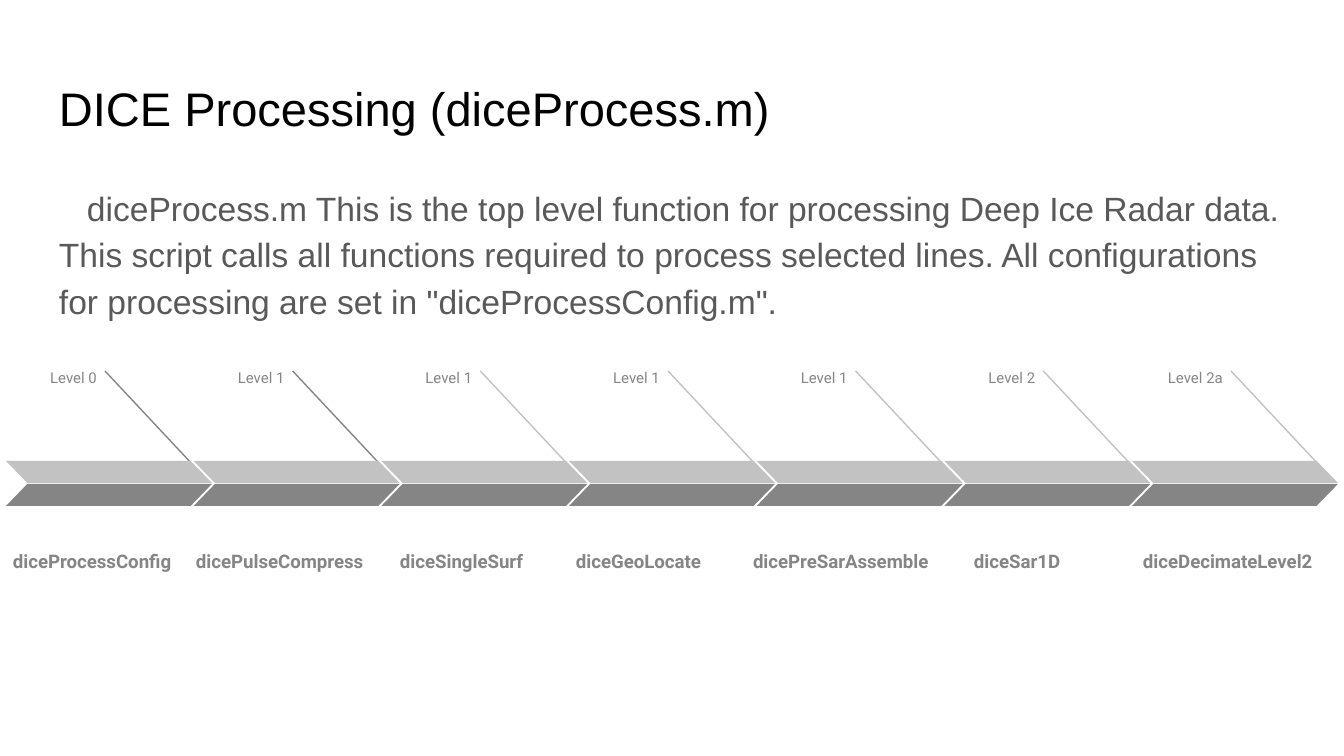
from lxml.etree import SubElement
from pptx import Presentation
from pptx.dml.color import RGBColor
from pptx.enum.shapes import MSO_CONNECTOR, MSO_SHAPE
from pptx.enum.text import MSO_ANCHOR as Anchor, MSO_AUTO_SIZE, PP_ALIGN as Align
from pptx.oxml.ns import qn
from pptx.util import Emu, Pt

# Content
TITLE = "DICE Processing (diceProcess.m)"
BODY = (
    "diceProcess.m This is the top level function for processing Deep Ice Radar data. "
    "This script calls all functions required to process selected lines. "
    'All configurations for processing are set in "diceProcessConfig.m".'
)
# Level, function, label left, label width, leader colour
STEPS = [
    ("Level 0", "diceProcessConfig", 0, 187, "dark"),
    ("Level 1", "dicePulseCompress", 183, 195, "dark"),
    ("Level 1", "diceSingleSurf", 387, 169, "light"),
    ("Level 1", "diceGeoLocate", 563, 169, "light"),
    ("Level 1", "dicePreSarAssemble", 740, 206, "light"),
    ("Level 2", "diceSar1D", 961, 169, "light"),
    ("Level 2a", "diceDecimateLevel2", 1130, 200, "light"),
]
COLORS = {"title": "000000", "body": "595959", "dark": "858585", "light": "C2C2C2"}

# Layout in px
PX = 914400 / 134.4
FIRST_LEFT, LAST_LEFT = 6, 1132
PITCH = (LAST_LEFT - FIRST_LEFT) / (len(STEPS) - 1)
BAR_WIDTH, BAR_HEIGHT, BAR_SLANT = 206, 22, 0.97
UPPER_TOP, LOWER_TOP = 461, 484
INSET = 13


def px(value):
    return Emu(round(value * PX))


def color(name):
    return RGBColor.from_string(COLORS[name])


def write(box, text, size, tint, font="Arial", bold=False, align=Align.LEFT,
          anchor=Anchor.TOP, spacing=1.15, after=0):
    frame = box.text_frame
    frame.word_wrap = True
    frame.auto_size = MSO_AUTO_SIZE.NONE
    frame.vertical_anchor = anchor
    frame.margin_left = frame.margin_right = px(INSET)
    frame.margin_top = frame.margin_bottom = px(INSET)
    para = frame.paragraphs[0]
    para.text = text
    para.alignment = align
    para.line_spacing = spacing
    para.space_before, para.space_after = Pt(0), Pt(after)
    para.font.name, para.font.size, para.font.bold = font, Pt(size), bold
    para.font.color.rgb = color(tint)
    return para


def place(box, left, top, width, height):
    box.left, box.top, box.width, box.height = map(px, (left, top, width, height))


def add_text(page, left, top, width, height, *args, **style):
    box = page.shapes.add_textbox(*map(px, (left, top, width, height)))
    write(box, *args, font="Roboto", **style)


def add_leader(page, left, tint):
    ends = (left + 99, 371, left + 202, 481)
    line = page.shapes.add_connector(MSO_CONNECTOR.STRAIGHT, *map(px, ends))
    line.line.color.rgb = color(tint)
    line.line.width = Pt(0.75)
    SubElement(line._element.spPr, qn("a:effectLst"))


def add_bar(page, left, top, tint, flipped=False):
    bar = page.shapes.add_shape(
        MSO_SHAPE.PARALLELOGRAM, *map(px, (left, top, BAR_WIDTH, BAR_HEIGHT)))
    bar.adjustments[0] = BAR_SLANT
    bar.shadow.inherit = False
    bar.fill.solid()
    bar.fill.fore_color.rgb = color(tint)
    bar.line.fill.background()
    if flipped:
        bar._element.spPr.xfrm.set("flipH", "1")


deck = Presentation()
deck.slide_width, deck.slide_height = px(1344), px(756)
page = deck.slides.add_slide(deck.slide_layouts[1])

# Title and description
title, body = page.placeholders
place(title, 46, 66, 1252, 84)
write(title, TITLE, 25.2, "title", spacing=1.0)
place(body, 46, 169, 1252, 184)
para = write(body, BODY, 18, "body", after=12)
properties = para._p.get_or_add_pPr()
properties.set("marL", "0")
properties.set("indent", str(px(28)))
SubElement(properties, qn("a:buNone"))

# Processing chain
for index, (level, function, label_left, label_width, tint) in enumerate(STEPS):
    left = FIRST_LEFT + index * PITCH
    add_leader(page, left, tint)
    add_bar(page, left, UPPER_TOP, "light", flipped=True)
    add_bar(page, left, LOWER_TOP, "dark")
    add_text(page, label_left, 519, label_width, 66, function, 10, "dark",
             bold=True, anchor=Anchor.BOTTOM)
    add_text(page, left + 14, 353, 90, 35, level, 8, "dark",
             align=Align.RIGHT, after=16)

deck.save("out.pptx")
